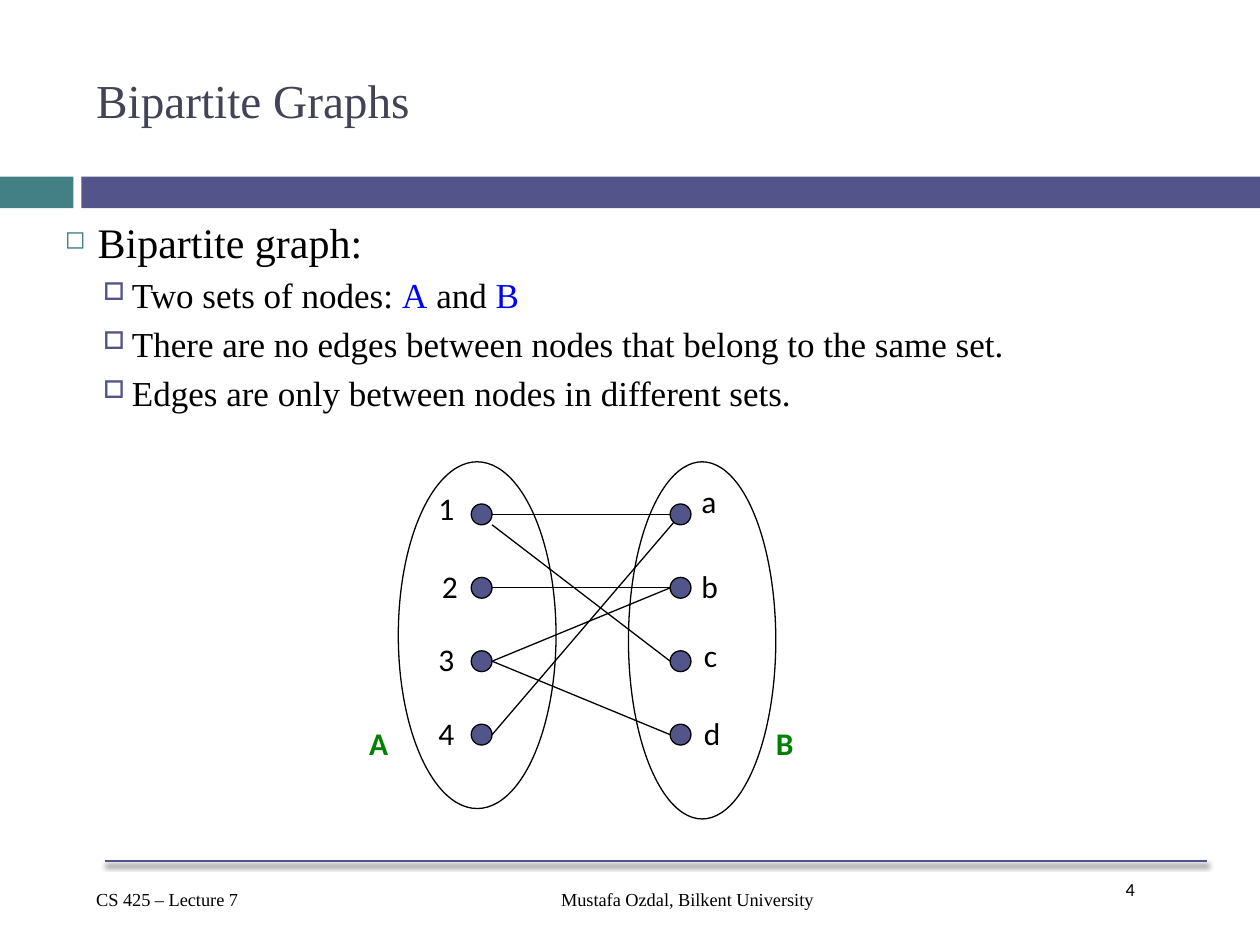
from dataclasses import dataclass

from lxml.etree import SubElement
from pptx import Presentation
from pptx.dml.color import RGBColor
from pptx.enum.shapes import MSO_CONNECTOR, MSO_SHAPE
from pptx.enum.text import MSO_ANCHOR, PP_ALIGN
from pptx.oxml.ns import qn
from pptx.util import Cm, Pt

PURPLE, TEAL, BLACK, BLUE, GREEN = "53548A", "438086", "000000", "0000FF", "008000"
SERIF, SANS = "Times New Roman", "Calibri"

# Graph geometry in cm
NODE_SIZE = 0.42
FIRST_ROW, ROW_PITCH = 10.37, 1.48
LEFT_NODES, RIGHT_NODES = 9.5, 13.51


@dataclass
class Node:
    name: str
    label_x: float
    label_y: float


@dataclass
class NodeSet:
    name: str
    name_x: float
    node_x: float
    outline: tuple
    nodes: list


@dataclass
class Edge:
    start_row: int
    end_row: int
    start_dy: float = 0
    end_dx: float = 0


@dataclass
class Bullet:
    runs: list
    level: int
    size: float
    symbol: str
    color: str
    percent: int
    margin: float
    hanging: float
    before: float = 0


def rgb(value: str) -> RGBColor:
    return RGBColor.from_string(value)


def add_run(paragraph, text: str, font: str, size: float, color: str = BLACK,
            bold: bool = False) -> None:
    run = paragraph.add_run()
    run.text = text
    run.font.name, run.font.size, run.font.bold = font, Pt(size), bold
    run.font.color.rgb = rgb(color)


def add_frame(slide, x: float, y: float, width: float, height: float, wrap: bool = True):
    frame = slide.shapes.add_textbox(Cm(x), Cm(y), Cm(width), Cm(height)).text_frame
    frame.word_wrap = wrap
    return frame


def add_text(slide, text: str, x: float, y: float, width: float, height: float, *,
             font: str = SERIF, size: float = 10.5, color: str = BLACK, bold: bool = False,
             align=PP_ALIGN.LEFT, anchor=MSO_ANCHOR.TOP, wrap: bool = True) -> None:
    frame = add_frame(slide, x, y, width, height, wrap)
    frame.vertical_anchor = anchor
    frame.paragraphs[0].alignment = align
    add_run(frame.paragraphs[0], text, font, size, color, bold)


def add_label(slide, text: str, x: float, y: float, **style) -> None:
    add_text(slide, text, x, y, 0.91, 1.02, font=SANS, size=18, wrap=False, **style)


def add_figure(slide, kind, x: float, y: float, width: float, height: float,
               fill: str = "", line: str = "") -> None:
    shape = slide.shapes.add_shape(kind, Cm(x), Cm(y), Cm(width), Cm(height))
    shape.shadow.inherit = False
    if fill:
        shape.fill.solid()
        shape.fill.fore_color.rgb = rgb(fill)
    else:
        shape.fill.background()
    if line:
        shape.line.color.rgb = rgb(line)
        shape.line.width = Pt(0.75)
    else:
        shape.line.fill.background()


def add_line(slide, x1: float, y1: float, x2: float, y2: float,
             color: str = BLACK, width: float = 0.75):
    """Draw a straight line and return its effect list."""
    line = slide.shapes.add_connector(MSO_CONNECTOR.STRAIGHT, Cm(x1), Cm(y1), Cm(x2), Cm(y2))
    line.line.color.rgb = rgb(color)
    line.line.width = Pt(width)
    return SubElement(line._element.spPr, qn("a:effectLst"))


def add_shadow(effects) -> None:
    shadow = SubElement(effects, qn("a:outerShdw"), blurRad=str(Pt(3)), dist=str(Pt(2.4)),
                        dir="5400000", algn="t", rotWithShape="0")
    color = SubElement(shadow, qn("a:srgbClr"), val=BLACK)
    SubElement(color, qn("a:alpha"), val="45000")


def add_bullet(paragraph, bullet: Bullet) -> None:
    paragraph.level = bullet.level
    paragraph.space_before = Pt(bullet.before)
    properties = paragraph._p.get_or_add_pPr()
    properties.set("marL", str(Cm(bullet.margin)))
    properties.set("indent", str(-Cm(bullet.hanging)))
    color = SubElement(properties, qn("a:buClr"))
    SubElement(color, qn("a:srgbClr"), val=bullet.color)
    SubElement(properties, qn("a:buSzPct"), val=str(bullet.percent * 1000))
    SubElement(properties, qn("a:buChar"), char=bullet.symbol)
    for text, text_color in bullet.runs:
        add_run(paragraph, text, SERIF, bullet.size, text_color)


def sub_bullet(*runs) -> Bullet:
    return Bullet(list(runs), 1, 20, "□", PURPLE, 70, 1.35, 0.58, 4.1)


def row_y(row: int) -> float:
    return FIRST_ROW + row * ROW_PITCH


def add_node_set(slide, node_set: NodeSet) -> None:
    add_figure(slide, MSO_SHAPE.OVAL, *node_set.outline, line=BLACK)
    for row, node in enumerate(node_set.nodes):
        add_figure(slide, MSO_SHAPE.OVAL, node_set.node_x, row_y(row) - NODE_SIZE / 2,
                   NODE_SIZE, NODE_SIZE, PURPLE, BLACK)
        add_label(slide, node.name, node.label_x, node.label_y)
    add_label(slide, node_set.name, node_set.name_x, 14.48, color=GREEN, bold=True)


def add_edge(slide, edge: Edge) -> None:
    add_line(slide, LEFT_NODES + NODE_SIZE, row_y(edge.start_row) + edge.start_dy,
             RIGHT_NODES + edge.end_dx, row_y(edge.end_row))


BULLETS = [
    Bullet([("Bipartite graph:", BLACK)], 0, 24, "◻", TEAL, 60, 0.66, 0.66),
    sub_bullet(("Two sets of nodes: ", BLACK), ("A", BLUE), (" and ", BLACK), ("B", BLUE)),
    sub_bullet(("There are no edges between nodes that belong to the same set.", BLACK)),
    sub_bullet(("Edges are only between nodes in different sets.", BLACK)),
]
NODE_SETS = [
    NodeSet("A", 7.19, LEFT_NODES, (8.03, 9.31, 3.18, 6.99),
            [Node("1", 8.59, 9.73), Node("2", 8.66, 11.3),
             Node("3", 8.59, 12.78), Node("4", 8.59, 14.27)]),
    NodeSet("B", 15.39, RIGHT_NODES, (12.67, 9.31, 2.97, 7.2),
            [Node("a", 13.89, 9.6), Node("b", 13.89, 11.3),
             Node("c", 13.94, 12.7), Node("d", 13.94, 14.27)]),
]
EDGES = [Edge(0, 0), Edge(0, 2, start_dy=NODE_SIZE / 2), Edge(1, 1), Edge(2, 1), Edge(2, 3),
         Edge(3, 0, end_dx=NODE_SIZE / 2)]


def main() -> None:
    deck = Presentation()
    deck.slide_width, deck.slide_height = Cm(25.4), Cm(19.05)
    slide = deck.slides.add_slide(deck.slide_layouts[6])

    # Title and band
    add_figure(slide, MSO_SHAPE.RECTANGLE, 0, 3.56, 1.48, 0.64, TEAL)
    add_figure(slide, MSO_SHAPE.RECTANGLE, 1.64, 3.56, 23.76, 0.64, PURPLE)
    add_text(slide, "Bipartite Graphs", 1.69, 0.64, 22.65, 2.75, size=27, color="424456",
             anchor=MSO_ANCHOR.MIDDLE)

    # Definition
    body = add_frame(slide, 1.06, 4.23, 23.92, 4.66)
    for index, bullet in enumerate(BULLETS):
        add_bullet(body.add_paragraph() if index else body.paragraphs[0], bullet)

    # Graph
    for edge in EDGES:
        add_edge(slide, edge)
    for node_set in NODE_SETS:
        add_node_set(slide, node_set)

    # Footer
    add_shadow(add_line(slide, 2.12, 17.36, 24.34, 17.36, PURPLE, 1.5))
    add_text(slide, "CS 425 – Lecture 7", 1.69, 17.78, 4.66, 0.71)
    add_text(slide, "Mustafa Ozdal, Bilkent University", 6.56, 17.78, 14.6, 0.86,
             align=PP_ALIGN.CENTER)
    add_text(slide, "4", 22.44, 17.57, 1.9, 1.27, font=SANS)

    deck.save("out.pptx")


if __name__ == "__main__":
    main()
